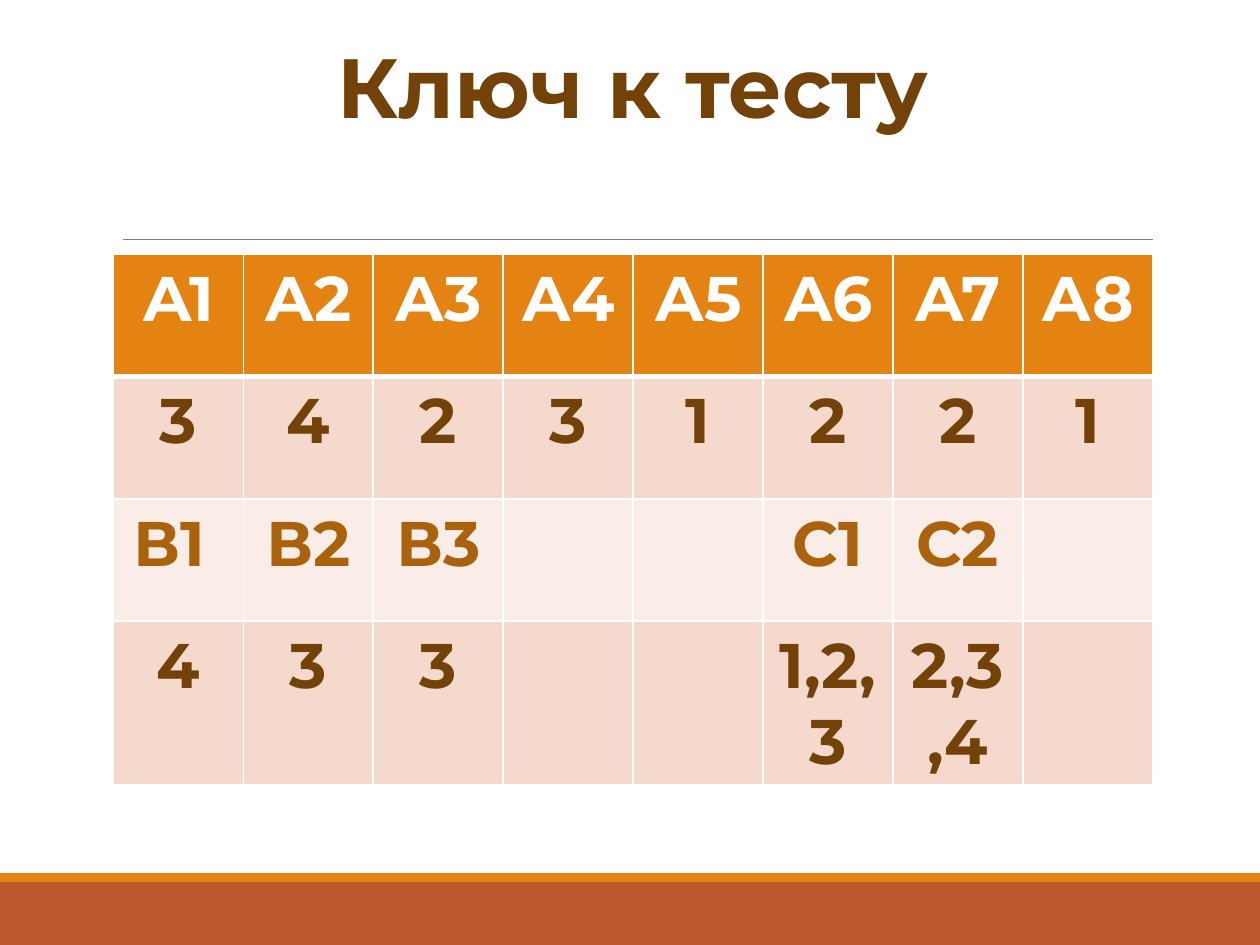
import pptx
import pptx.dml.color
import pptx.enum.shapes
import pptx.enum.text
import pptx.oxml.ns
import pptx.util
from lxml import etree

Inches = pptx.util.Inches
Pt = pptx.util.Pt
RGBColor = pptx.dml.color.RGBColor
qn = pptx.oxml.ns.qn

WHITE = RGBColor(0xFF, 0xFF, 0xFF)
ORANGE = RGBColor(0xE4, 0x83, 0x12)
RUST = RGBColor(0xBD, 0x58, 0x2C)
BROWN = RGBColor(0x72, 0x42, 0x09)
LIGHT_BROWN = RGBColor(0xAB, 0x62, 0x0D)
PINK = RGBColor(0xF5, 0xD9, 0xCC)
PALE_PINK = RGBColor(0xFA, 0xED, 0xE7)
GRAY = RGBColor(0x80, 0x80, 0x80)
FONT = "Montserrat"

# Each row: cell texts, text colour, fill
ANSWER_ROWS = [
    (["А1", "А2", "А3", "А4", "А5", "А6", "А7", "А8"], WHITE, ORANGE),
    (["3", "4", "2", "3", "1", "2", "2", "1"], BROWN, PINK),
    (["В1 ", "В2", "В3", "", "", "С1", "С2", ""], LIGHT_BROWN, PALE_PINK),
    (["4", "3", "3", "", "", "1,2,3", "2,3,4", ""], BROWN, PINK),
]


def add_centred_run(paragraph, text, size, color):
    paragraph.alignment = pptx.enum.text.PP_ALIGN.CENTER
    run = paragraph.add_run()
    run.text = text
    run.font.name = FONT
    run.font.size = Pt(size)
    run.font.bold = True
    run.font.color.rgb = color


def add_band(slide, left, top, width, height, color):
    band = slide.shapes.add_shape(
        pptx.enum.shapes.MSO_SHAPE.RECTANGLE, left, top, width, height)
    band.shadow.inherit = False
    band.fill.solid()
    band.fill.fore_color.rgb = color
    band.line.fill.background()


def add_footer(slide, left, top, width, height):
    """Draw the rust band with a thin orange stripe along its top."""
    stripe = Inches(0.07)
    add_band(slide, left, top + stripe, width, height - stripe, RUST)
    add_band(slide, left, top, width, stripe, ORANGE)


def add_rule(slide, left, top, width):
    rule = slide.shapes.add_connector(
        pptx.enum.shapes.MSO_CONNECTOR.STRAIGHT, left, top, left + width, top)
    rule.line.color.rgb = GRAY
    rule.line.width = Pt(0.5)
    etree.SubElement(rule.element.spPr, qn("a:effectLst"))


def add_title(slide, left, top, width, height):
    frame = slide.shapes.add_textbox(left, top, width, height).text_frame
    frame.word_wrap = True
    frame.margin_top = Inches(0.09)
    frame.vertical_anchor = pptx.enum.text.MSO_ANCHOR.TOP
    paragraph = frame.paragraphs[0]
    paragraph.line_spacing = 0.85
    add_centred_run(paragraph, "Ключ к тесту", 48, BROWN)


def set_borders(cell, top=1, bottom=1):
    """Add white borders; must come before the fill to keep the XML order."""
    properties = cell._tc.get_or_add_tcPr()
    for side, width in (("L", 1), ("R", 1), ("T", top), ("B", bottom)):
        line = etree.SubElement(properties, qn(f"a:ln{side}"), w=str(Pt(width)))
        fill = etree.SubElement(line, qn("a:solidFill"))
        etree.SubElement(fill, qn("a:srgbClr"), val=str(WHITE))


def add_answer_table(slide, left, top, width, height):
    row_count, column_count = len(ANSWER_ROWS), len(ANSWER_ROWS[0][0])
    table = slide.shapes.add_table(
        row_count, column_count, left, top, width, height).table
    for row_index, (texts, text_color, fill_color) in enumerate(ANSWER_ROWS):
        for column_index, text in enumerate(texts):
            cell = table.cell(row_index, column_index)
            set_borders(cell, top=3 if row_index == 1 else 1,
                        bottom=3 if row_index == 0 else 1)
            cell.fill.solid()
            cell.fill.fore_color.rgb = fill_color
            if text:
                add_centred_run(
                    cell.text_frame.paragraphs[0], text, 36, text_color)


def main():
    presentation = pptx.Presentation()
    presentation.slide_width = Inches(10)
    presentation.slide_height = Inches(7.5)
    slide = presentation.slides.add_slide(presentation.slide_layouts[6])
    left, width = Inches(0.9), Inches(8.25)
    add_footer(slide, 0, Inches(6.93), presentation.slide_width, Inches(0.57))
    add_rule(slide, Inches(0.98), Inches(1.9), Inches(8.17))
    add_title(slide, left, Inches(0.31), width, Inches(1.59))
    add_answer_table(slide, left, Inches(2.02), width, 4 * Inches(0.97))
    presentation.save("out.pptx")


if __name__ == "__main__":
    main()
